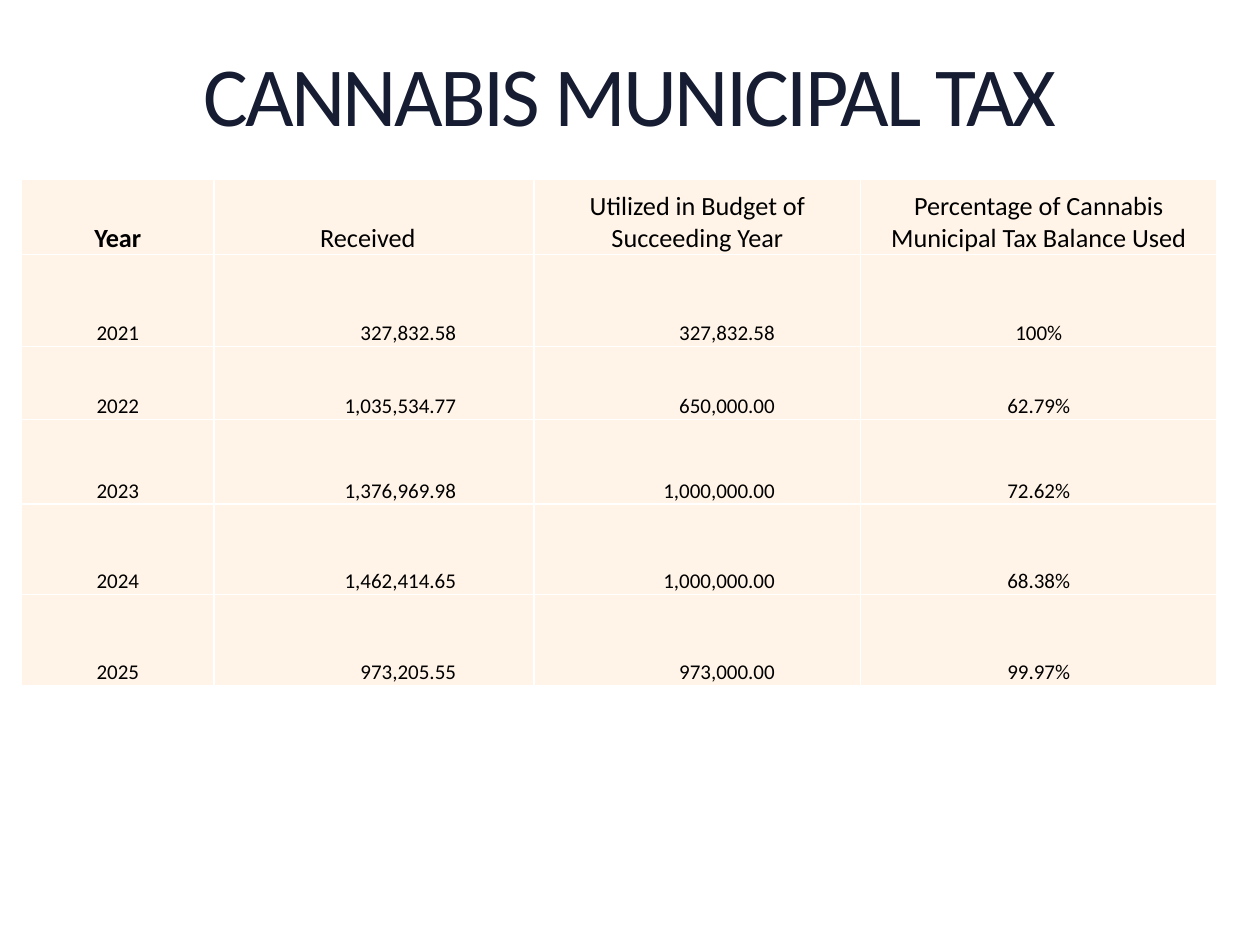
"""Build a slide with a table of cannabis municipal tax by year."""
from dataclasses import dataclass

from lxml import etree
from pptx import Presentation
from pptx.dml.color import RGBColor
from pptx.enum.text import MSO_ANCHOR, PP_ALIGN
from pptx.oxml.ns import qn
from pptx.util import Inches, Pt

CENTER, RIGHT = PP_ALIGN.CENTER, PP_ALIGN.RIGHT
MIDDLE, BOTTOM = MSO_ANCHOR.MIDDLE, MSO_ANCHOR.BOTTOM


@dataclass(frozen=True)
class Theme:
    font: str = "Calibri"
    title: str = "161D32"
    text: str = "000000"
    fill: str = "FFF4E7"
    rule: str = "FFFFFF"
    title_size: float = 48
    head_size: float = 15
    body_size: float = 12


@dataclass(frozen=True)
class Column:
    head: str
    width: float
    align: PP_ALIGN = CENTER
    inset: float = 0.01
    head_inset: float = 0.01
    bold: bool = False


THEME = Theme()
COLUMNS = (
    Column("Year", 1.53, bold=True),
    Column("Received", 2.54, RIGHT, 0.62, 0.11),
    Column("Utilized in Budget of Succeeding Year", 2.59, RIGHT, 0.68),
    Column("Percentage of Cannabis Municipal Tax Balance Used", 2.83),
)
HEIGHTS = (0.6, 0.73, 0.58, 0.67, 0.72, 0.72)
ROWS = (
    ("2021", "327,832.58", "327,832.58", "100%"),
    ("2022", "1,035,534.77", "650,000.00", "62.79%"),
    ("2023", "1,376,969.98", "1,000,000.00", "72.62%"),
    ("2024", "1,462,414.65", "1,000,000.00", "68.38%"),
    ("2025", "973,205.55", "973,000.00", "99.97%"),
)


def add_run(para, text: str, size: float, color: str, bold: bool = False):
    """Add one styled run to a paragraph."""
    run = para.add_run()
    run.text = text
    font = run.font
    font.name, font.size, font.bold = THEME.font, Pt(size), bold
    font.color.rgb = RGBColor.from_string(color)
    return run


def add_title(slide, text: str) -> None:
    """Add the centred title with tight letter spacing."""
    box = slide.shapes.add_textbox(Inches(0), Inches(0.42), Inches(10), Inches(0.73))
    frame = box.text_frame
    frame.word_wrap = True
    frame.vertical_anchor = MIDDLE
    frame.margin_left = frame.margin_right = 0
    frame.margin_top = frame.margin_bottom = 0
    para = frame.paragraphs[0]
    para.alignment, para.line_spacing = CENTER, 0.9
    run = add_run(para, text, THEME.title_size, THEME.title)
    run.font._element.set("spc", "-150")


def add_rules(cell) -> None:
    """Draw thin lines on all four sides of a cell."""
    props = cell._tc.get_or_add_tcPr()
    for place, side in enumerate(("a:lnL", "a:lnR", "a:lnT", "a:lnB")):
        line = etree.Element(qn(side), w=str(Pt(1)))
        fill = etree.SubElement(line, qn("a:solidFill"))
        etree.SubElement(fill, qn("a:srgbClr"), val=THEME.rule)
        props.insert(place, line)


def fill_cell(cell, text: str, col: Column, head: bool) -> None:
    """Fill and style one cell of the table."""
    cell.fill.solid()
    cell.fill.fore_color.rgb = RGBColor.from_string(THEME.fill)
    add_rules(cell)
    cell.vertical_anchor = BOTTOM
    cell.margin_left = cell.margin_top = Inches(0.01)
    cell.margin_right = Inches(col.head_inset if head else col.inset)
    cell.margin_bottom = 0
    para = cell.text_frame.paragraphs[0]
    para.alignment = CENTER if head else col.align
    size = THEME.head_size if head else THEME.body_size
    add_run(para, text, size, THEME.text, head and col.bold)


def add_grid(slide) -> None:
    """Add the tax table."""
    width = sum(col.width for col in COLUMNS)
    frame = slide.shapes.add_table(
        len(HEIGHTS), len(COLUMNS), Inches(0.17), Inches(1.42),
        Inches(width), Inches(sum(HEIGHTS)))
    table = frame.table
    table.first_row = table.horz_banding = False
    for slot, col in zip(table.columns, COLUMNS):
        slot.width = Inches(col.width)
    heads = tuple(col.head for col in COLUMNS)
    for i, (height, texts) in enumerate(zip(HEIGHTS, (heads, *ROWS))):
        table.rows[i].height = Inches(height)
        for j, (text, col) in enumerate(zip(texts, COLUMNS)):
            fill_cell(table.cell(i, j), text, col, i == 0)


def main() -> None:
    """Build and save the slide."""
    deck = Presentation()
    deck.slide_width, deck.slide_height = Inches(10), Inches(7.5)
    slide = deck.slides.add_slide(deck.slide_layouts[6])
    add_title(slide, "CANNABIS MUNICIPAL TAX")
    add_grid(slide)
    deck.save("out.pptx")


if __name__ == "__main__":
    main()
